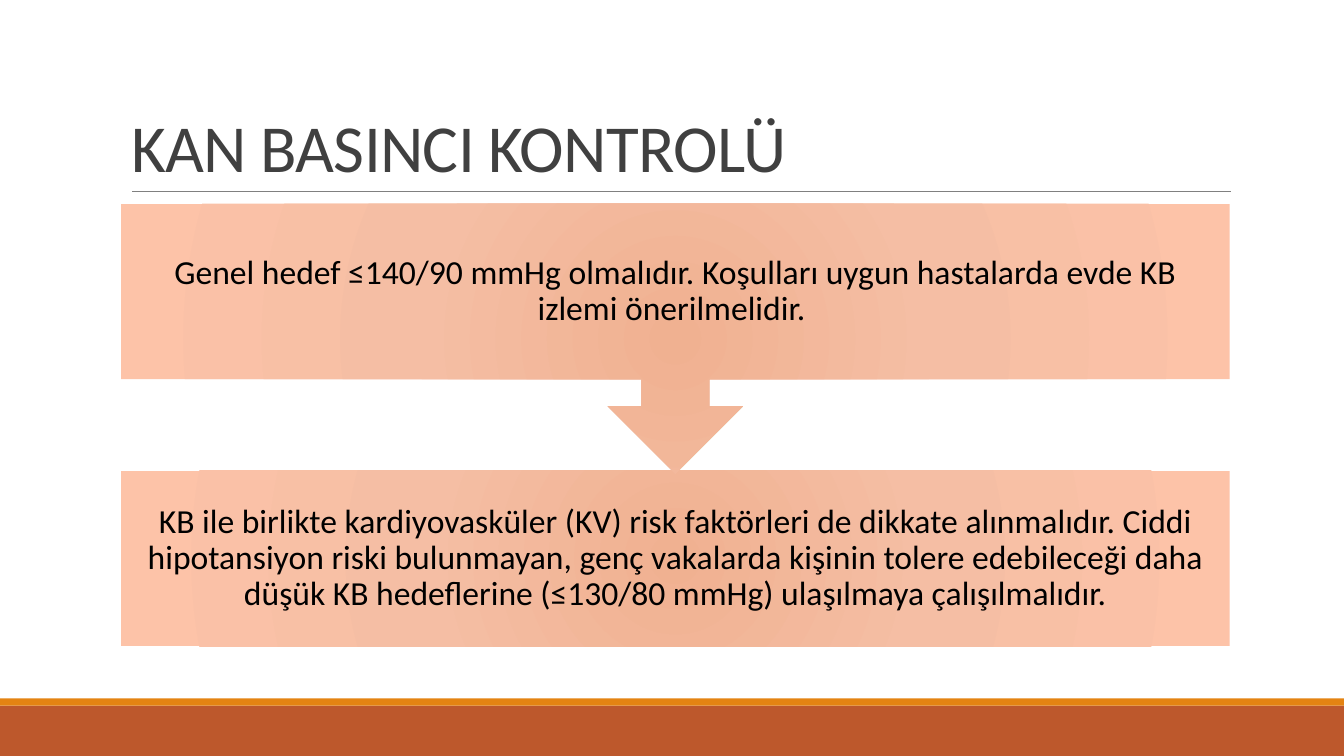
from pptx import Presentation
from pptx.dml.color import RGBColor
from pptx.enum.shapes import MSO_CONNECTOR, MSO_SHAPE
from pptx.enum.text import MSO_ANCHOR, MSO_AUTO_SIZE, PP_ALIGN
from pptx.oxml import parse_xml
from pptx.oxml.ns import nsdecls
from pptx.util import Cm, Pt

RECTANGLE = MSO_SHAPE.RECTANGLE
ARROW_CALLOUT = MSO_SHAPE.DOWN_ARROW_CALLOUT

# Content
TITLE = "KAN BASINCI KONTROLÜ"
GENERAL_TARGET = (
    "Genel hedef ≤140/90 mmHg olmalıdır. Koşulları uygun hastalarda "
    "evde KB izlemi önerilmelidir. "
)
LOWER_TARGET = (
    "KB ile birlikte kardiyovasküler (KV) risk faktörleri de dikkate alınmalıdır. "
    "Ciddi hipotansiyon riski bulunmayan, genç vakalarda kişinin tolere "
    "edebileceği daha düşük KB hedeflerine (≤130/80 mmHg) ulaşılmaya "
    "çalışılmalıdır."
)

# Style
FONT = "Calibri"
TITLE_GREY = RGBColor(0x40, 0x40, 0x40)
RULE_GREY = RGBColor(0x80, 0x80, 0x80)
BLACK = RGBColor(0, 0, 0)
RUST = RGBColor(0xBD, 0x58, 0x2C)
ORANGE = RGBColor(0xE4, 0x83, 0x12)
PEACH_STOPS = [
    (0, RGBColor(0xF0, 0xB1, 0x91)),
    (45, RGBColor(0xF5, 0xBE, 0xA4)),
    (100, RGBColor(0xFD, 0xC3, 0xA8)),
]

# Layout
SLIDE_W, SLIDE_H = Cm(33.87), Cm(19.05)
LEFT, CONTENT_W = Cm(3.05), Cm(27.94)
FOOTER_H, STRIPE_H = Cm(1.27), Cm(0.18)
RULE_LEFT, RULE_RIGHT, RULE_Y = Cm(3.33), Cm(31.01), Cm(4.83)
STEPS = [  # shape, text, top, height; back to front
    (RECTANGLE, LOWER_TARGET, Cm(11.86), Cm(4.43)),
    (ARROW_CALLOUT, GENERAL_TARGET, Cm(5.13), Cm(6.81)),
]
STEP_INSET = Cm(0.48)


def add_block(kind, left, top, width, height):
    block = slide.shapes.add_shape(kind, left, top, width, height)
    block.shadow.inherit = False
    block.line.fill.background()
    return block


def fill_radial(shape, stops):
    shape.fill.background()
    no_fill = shape.element.spPr.find("{*}noFill")
    stop_xml = "".join(
        f'<a:gs pos="{pos * 1000}"><a:srgbClr val="{color}"/></a:gs>'
        for pos, color in stops
    )
    gradient = parse_xml(
        f'<a:gradFill {nsdecls("a")} rotWithShape="1"><a:gsLst>{stop_xml}</a:gsLst>'
        '<a:path path="circle"><a:fillToRect l="100000" t="100000" '
        'r="100000" b="100000"/></a:path></a:gradFill>'
    )
    no_fill.getparent().replace(no_fill, gradient)


def format_text(frame, size, color, align, spacing):
    frame.word_wrap = True
    frame.auto_size = MSO_AUTO_SIZE.NONE
    paragraph = frame.paragraphs[0]
    paragraph.alignment = align
    paragraph.line_spacing = spacing
    font = paragraph.runs[0].font
    font.name, font.size, font.color.rgb = FONT, Pt(size), color


prs = Presentation()
prs.slide_width, prs.slide_height = SLIDE_W, SLIDE_H
slide = prs.slides.add_slide(prs.slide_layouts[5])

# Footer bands
footer_top = SLIDE_H - FOOTER_H
for color, top, height in [
    (RUST, footer_top, FOOTER_H),
    (ORANGE, footer_top - STRIPE_H, STRIPE_H),
]:
    band = add_block(RECTANGLE, 0, top, SLIDE_W, height)
    band.fill.solid()
    band.fill.fore_color.rgb = color

# Title and the rule below it
title = slide.shapes.title
title.left, title.top, title.width, title.height = LEFT, Cm(0.79), CONTENT_W, Cm(4.04)
title.text_frame.text = TITLE
title.text_frame.vertical_anchor = MSO_ANCHOR.BOTTOM
format_text(title.text_frame, 48, TITLE_GREY, PP_ALIGN.LEFT, 0.85)
title.text_frame.paragraphs[0].runs[0].font._element.set("spc", "-50")

rule = slide.shapes.add_connector(
    MSO_CONNECTOR.STRAIGHT, RULE_LEFT, RULE_Y, RULE_RIGHT, RULE_Y
)
rule.line.color.rgb = RULE_GREY
rule.line.width = Pt(0.5)
rule.element.spPr.append(parse_xml(f'<a:effectLst {nsdecls("a")}/>'))

# Target steps, the first pointing down to the second
for kind, text, top, height in STEPS:
    step = add_block(kind, LEFT, top, CONTENT_W, height)
    fill_radial(step, PEACH_STOPS)
    frame = step.text_frame
    frame.text = text
    frame.vertical_anchor = MSO_ANCHOR.MIDDLE
    frame.margin_left = frame.margin_right = STEP_INSET
    frame.margin_top = frame.margin_bottom = STEP_INSET
    format_text(frame, 24, BLACK, PP_ALIGN.CENTER, 0.9)

prs.save("out.pptx")
